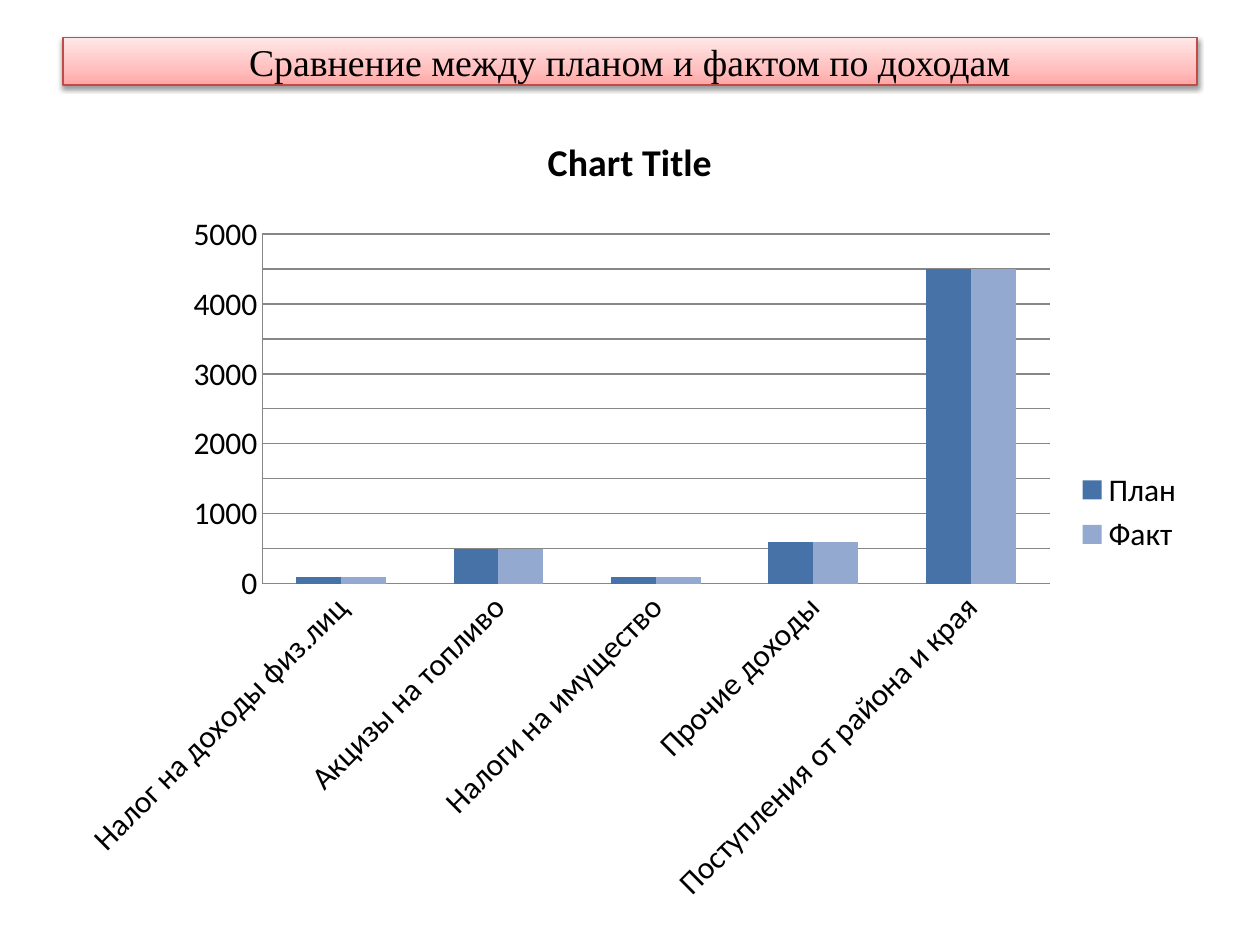
import copy
import pptx
import pptx.chart.data
import pptx.dml.color
import pptx.enum.chart
import pptx.enum.text
import pptx.oxml
import pptx.oxml.ns
import pptx.util

RGB = pptx.dml.color.RGBColor
Pt = pptx.util.Pt

BLACK = RGB(0x00, 0x00, 0x00)
GRAY = RGB(0x87, 0x87, 0x87)
EDGE = RGB(0xBF, 0x4C, 0x48)
PINKS = [(0, RGB(0xFF, 0xA6, 0xA5)), (0.35, RGB(0xFF, 0xC0, 0xBF)), (1, RGB(0xFF, 0xE7, 0xE7))]
BLUES = [RGB(0x46, 0x72, 0xA8), RGB(0x93, 0xA9, 0xCF)]

WIDE = pptx.util.Inches(10)
HIGH = pptx.util.Inches(7.5)
HEAD = (0.05, 0.04, 0.9, 0.05)
PLOT = (0.05, 0.84 / 7.5, 0.9, 6.45 / 7.5)

TITLE = "Сравнение между планом и фактом по доходам"
CATS = [
    "Налог на доходы физ.лиц",
    "Акцизы на топливо",
    "Налоги на имущество",
    "Прочие доходы",
    "Поступления от района и края",
]
VALS = [100, 500, 100, 600, 4500]
ROWS = {"План": VALS, "Факт": VALS}

SHADOW = (
    '<a:effectLst %s><a:outerShdw blurRad="39400" dist="20300" dir="5400000" rotWithShape="0">'
    '<a:srgbClr val="000000"><a:alpha val="38000"/></a:srgbClr></a:outerShdw></a:effectLst>'
    % pptx.oxml.ns.nsdecls("a")
)


def scale(box):
    left, top, wide, high = box
    return int(left * WIDE), int(top * HIGH), int(wide * WIDE), int(high * HIGH)


def style(font, size, name="Calibri", bold=False):
    font.size = Pt(size)
    font.name = name
    font.bold = bold
    font.color.rgb = BLACK


def add_head(slide, box):
    head = slide.shapes.title
    head.left, head.top, head.width, head.height = scale(box)
    head.fill.gradient()
    head.fill.gradient_angle = 90
    first = head.fill.gradient_stops[0]._gs
    first.addnext(copy.deepcopy(first))
    for stop, (place, color) in zip(head.fill.gradient_stops, PINKS):
        stop.position = place
        stop.color.rgb = color
    head.line.color.rgb = EDGE
    head.line.width = Pt(0.75)
    head._element.spPr.append(pptx.oxml.parse_xml(SHADOW))
    frame = head.text_frame
    frame.text = TITLE
    frame.auto_size = pptx.enum.text.MSO_AUTO_SIZE.NONE
    frame.vertical_anchor = pptx.enum.text.MSO_ANCHOR.MIDDLE
    line = frame.paragraphs[0]
    line.alignment = pptx.enum.text.PP_ALIGN.CENTER
    style(line.font, 21.6, "Times New Roman")


def add_plot(slide, box):
    data = pptx.chart.data.CategoryChartData()
    data.categories = CATS
    for name, vals in ROWS.items():
        data.add_series(name, vals)
    kind = pptx.enum.chart.XL_CHART_TYPE.COLUMN_CLUSTERED
    chart = slide.shapes.add_chart(kind, *scale(box), data).chart
    style(chart.font, 18)

    chart.has_title = True
    chart.chart_title.include_in_layout = False
    frame = chart.chart_title.text_frame
    frame.text = "Chart Title"
    style(frame.paragraphs[0].font, 21.6, bold=True)

    chart.has_legend = True
    chart.legend.position = pptx.enum.chart.XL_LEGEND_POSITION.RIGHT
    chart.legend.include_in_layout = False

    for axis in (chart.category_axis, chart.value_axis):
        axis.major_tick_mark = pptx.enum.chart.XL_TICK_MARK.NONE
        axis.format.line.color.rgb = GRAY
        axis.format.line.width = Pt(0.75)
    grid = chart.value_axis
    grid.minimum_scale = 0
    grid.maximum_scale = 5000
    grid.major_unit = 500
    grid.has_major_gridlines = True
    grid.major_gridlines.format.line.color.rgb = GRAY
    grid.major_gridlines.format.line.width = Pt(0.75)

    plot = chart.plots[0]
    plot.gap_width = 150
    plot.vary_by_categories = False
    for bars, color in zip(plot.series, BLUES):
        bars.format.fill.solid()
        bars.format.fill.fore_color.rgb = color


def main():
    deck = pptx.Presentation()
    deck.slide_width = WIDE
    deck.slide_height = HIGH
    slide = deck.slides.add_slide(deck.slide_layouts[5])
    add_head(slide, HEAD)
    add_plot(slide, PLOT)
    deck.save("out.pptx")


if __name__ == "__main__":
    main()
